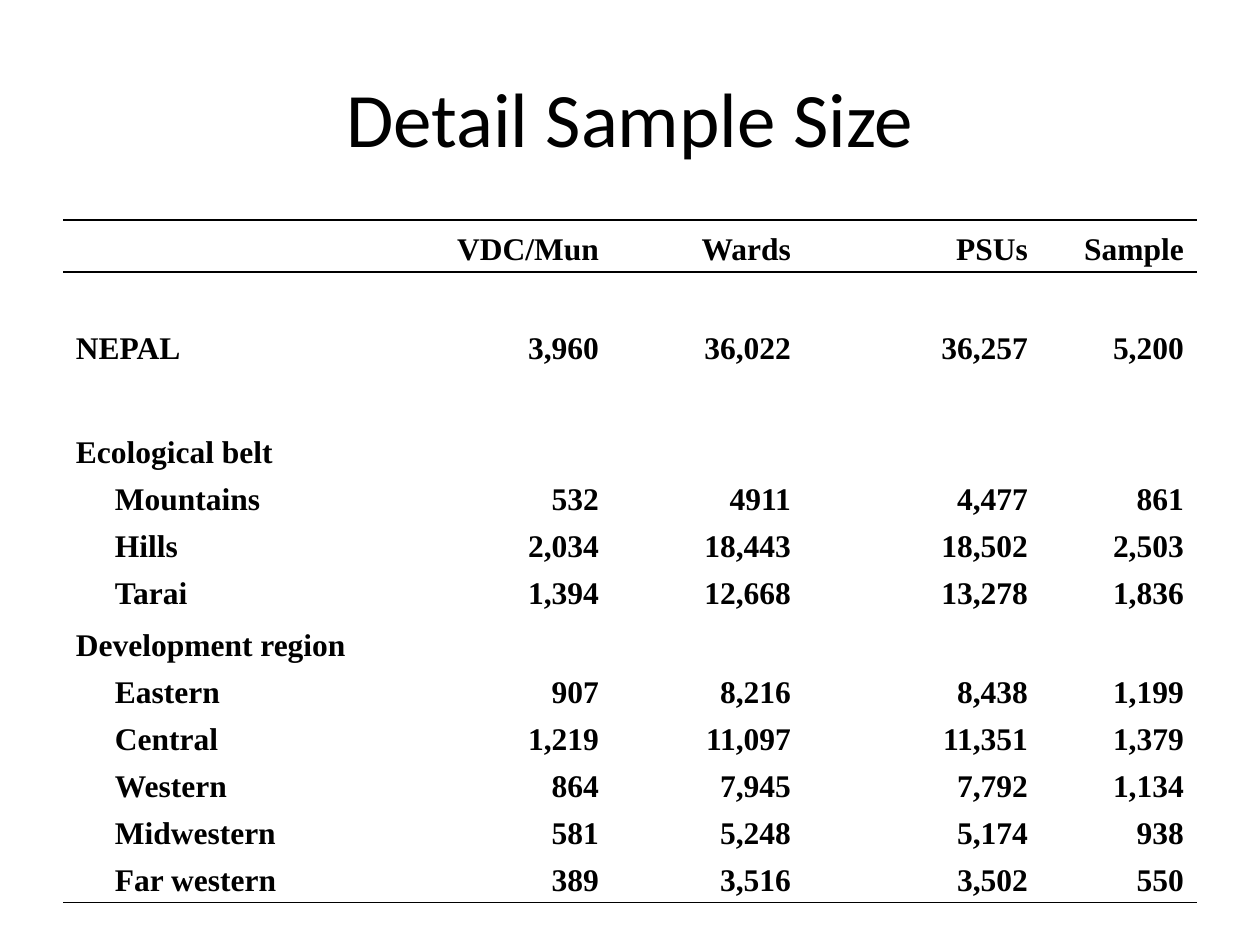
from lxml import etree
from pptx import Presentation
from pptx.dml.color import RGBColor
from pptx.enum import text
from pptx.oxml import ns
from pptx import util as u

PX = u.Inches(1) / 126
ALIGN = text.PP_ALIGN
ANCHOR = text.MSO_ANCHOR

COLS = [357, 192, 192, 198, 39, 156]
TALL, SHORT = 52, 47
VALUE_COLS = [1, 2, 3, 5]
HEADER = ("", "VDC/Mun", "Wards", "PSUs", "Sample")
BLANK = ("",)
ROWS = [
    HEADER,
    BLANK,
    ("NEPAL", "3,960", "36,022", "36,257", "5,200"),
    BLANK,
    ("Ecological belt",),
    ("Mountains", "532", "4911", "4,477", "861"),
    ("Hills", "2,034", "18,443", "18,502", "2,503"),
    ("Tarai", "1,394", "12,668", "13,278", "1,836"),
    ("Development region",),
    ("Eastern", "907", "8,216", "8,438", "1,199"),
    ("Central", "1,219", "11,097", "11,351", "1,379"),
    ("Western", "864", "7,945", "7,792", "1,134"),
    ("Midwestern", "581", "5,248", "5,174", "938"),
    ("Far western", "389", "3,516", "3,502", "550"),
]


def px(n):
    return u.Emu(round(n * PX))


def color(value):
    return RGBColor.from_string(value)


class SlideBuilder:
    ink = "000000"
    title_font = "Calibri"
    table_font = "Times New Roman"

    def __init__(self, slide):
        self.slide = slide

    def put_text(self, p, words, font, size, align, bold=False):
        p.text = words
        p.alignment = align
        for r in p.runs:
            r.font.name = font
            r.font.size = u.Pt(size)
            r.font.bold = bold
            r.font.color.rgb = color(self.ink)

    def title(self, words, x, y, w, h):
        tf = self.slide.shapes.add_textbox(px(x), px(y), px(w), px(h)).text_frame
        tf.word_wrap = True
        tf.vertical_anchor = ANCHOR.MIDDLE
        self.put_text(tf.paragraphs[0], words, self.title_font, 44, ALIGN.CENTER)

    def borders(self, cell, ruled):
        tc_pr = cell._tc.get_or_add_tcPr()
        for i, side in enumerate("LRTB"):
            ln = etree.Element(ns.qn(f"a:ln{side}"), w=str(u.Pt(1)))
            if side in ruled:
                fill = etree.SubElement(ln, ns.qn("a:solidFill"))
                etree.SubElement(fill, ns.qn("a:srgbClr"), val=self.ink)
            else:
                etree.SubElement(ln, ns.qn("a:noFill"))
            tc_pr.insert(i, ln)

    def cell(self, cell, words, align, ruled, indent=0):
        cell.margin_left = px(13 + indent)
        cell.margin_right = px(13)
        cell.margin_top, cell.margin_bottom = px(2), px(5)
        cell.vertical_anchor = ANCHOR.BOTTOM
        cell.fill.background()
        self.borders(cell, ruled)
        if words:
            self.put_text(cell.text_frame.paragraphs[0], words,
                          self.table_font, 18, align, bold=True)

    def table(self, rows, x, y):
        # A row with an empty cell is tall, a full data row is short
        heights = [SHORT if len(row) > 1 and row[0] else TALL for row in rows]
        tbl = self.slide.shapes.add_table(
            len(rows), len(COLS), px(x), px(y), px(sum(COLS)), px(sum(heights))).table
        tbl.first_row = tbl.horz_banding = False
        for col, width in zip(tbl.columns, COLS):
            col.width = px(width)

        rules = {0: "TB", 1: "T", len(rows) - 1: "B"}
        for i, (row, height) in enumerate(zip(rows, heights)):
            tbl.rows[i].height = px(height)
            ruled = rules.get(i, "")
            values = dict(zip(VALUE_COLS, row[1:]))
            # Data rows below the national total are indented
            indent = 39 if i > 2 and values else 0
            self.cell(tbl.cell(i, 0), row[0], ALIGN.LEFT, ruled, indent)
            for j in range(1, len(COLS)):
                self.cell(tbl.cell(i, j), values.get(j, ""), ALIGN.RIGHT, ruled)
            # The PSUs column spans two grid columns
            tbl.cell(i, 3).merge(tbl.cell(i, 4))


def main():
    prs = Presentation()
    prs.slide_width, prs.slide_height = u.Inches(10), u.Inches(7.5)
    s = SlideBuilder(prs.slides.add_slide(prs.slide_layouts[6]))

    # Heading
    s.title("Detail Sample Size", 63, 38, 1134, 157)

    # Sample table
    s.table(ROWS, 63, 220)

    prs.save("out.pptx")


if __name__ == "__main__":
    main()
